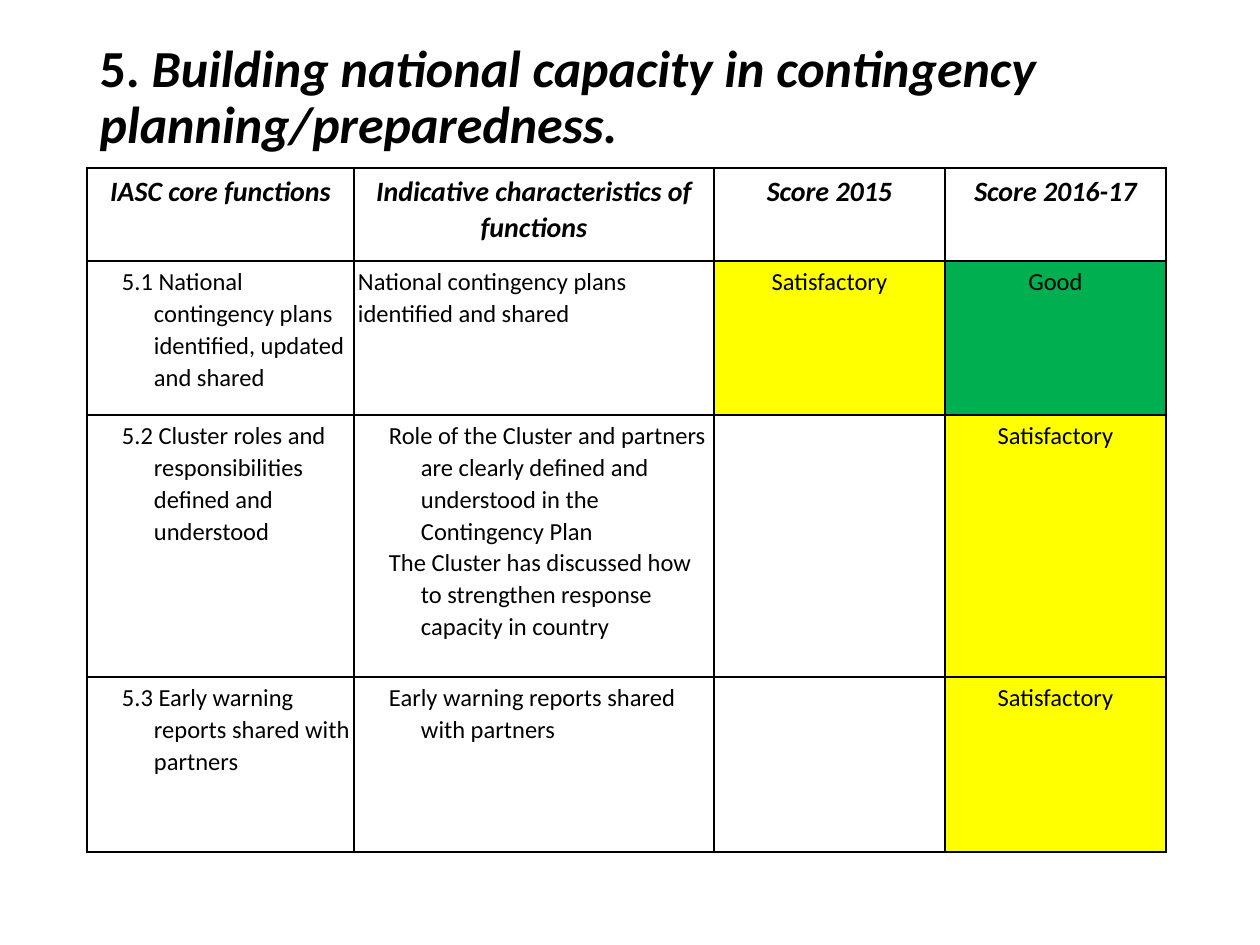
"""Build the slide on national capacity in contingency planning."""
import pptx
import pptx.dml.color
import pptx.enum.text
import pptx.oxml
import pptx.oxml.ns
import pptx.util

ALIGN = pptx.enum.text.PP_ALIGN
FONT = "Calibri"
BLACK, YELLOW, GREEN = "000000", "FFFF00", "00B050"
SCORE_FILLS = {"Satisfactory": YELLOW, "Good": GREEN}

TITLE_RUNS = [
    ("5. ", False),
    ("Building national capacity in contingency planning/preparedness.", True),
]
HEADERS = ["IASC core functions", "Indicative characteristics of functions",
           "Score 2015", "Score 2016-17"]
ROWS = [
    ["5.1 National contingency plans identified, updated and shared",
     "National contingency plans identified and shared",
     "Satisfactory", "Good"],
    ["5.2 Cluster roles and responsibilities defined and understood",
     "Role of the Cluster and partners are clearly defined and understood in the Contingency Plan\n"
     "The Cluster has discussed how to strengthen response capacity in country",
     "", "Satisfactory"],
    ["5.3 Early warning reports shared with partners",
     "Early warning reports shared with partners",
     "", "Satisfactory"],
]
UNINDENTED = (1, 1)
TITLE_BOX = (87, 50, 1086, 97)
TABLE_ORIGIN = (87, 168)
COLUMN_WIDTHS = [267, 360, 231, 221]
ROW_HEIGHTS = [93, 154, 262, 175]
CELL_MARGIN, HANGING_LEFT, HANGING_FIRST = 4, 63, -32


def px(length):
    return pptx.util.Emu(round(length * 914400 / 126))


def color(value):
    return pptx.dml.color.RGBColor.from_string(value)


def format_run(run, size, bold, italic):
    run.font.name = FONT
    run.font.size = pptx.util.Pt(size)
    run.font.bold = bold
    run.font.italic = italic
    run.font.color.rgb = color(BLACK)


def add_borders(cell):
    properties = cell._tc.get_or_add_tcPr()
    for index, side in enumerate(("lnL", "lnR", "lnT", "lnB")):
        properties.insert(index, pptx.oxml.parse_xml(
            f'<a:{side} {pptx.oxml.ns.nsdecls("a")} w="{pptx.util.Pt(1)}">'
            f'<a:solidFill><a:srgbClr val="{BLACK}"/></a:solidFill></a:{side}>'))


def fill_cell(cell, text, row, column):
    cell.margin_left = cell.margin_right = px(CELL_MARGIN)
    cell.margin_top = cell.margin_bottom = px(CELL_MARGIN)
    if text in SCORE_FILLS:
        cell.fill.solid()
        cell.fill.fore_color.rgb = color(SCORE_FILLS[text])
    else:
        cell.fill.background()
    add_borders(cell)
    if not text:
        return
    header = row == 0
    centered = header or column >= 2
    cell.text_frame.text = text
    for paragraph in cell.text_frame.paragraphs:
        paragraph.line_spacing = 1.07
        paragraph.alignment = ALIGN.CENTER if centered else ALIGN.LEFT
        if not centered and (row, column) != UNINDENTED:
            properties = paragraph._p.get_or_add_pPr()
            properties.set("marL", str(px(HANGING_LEFT)))
            properties.set("indent", str(px(HANGING_FIRST)))
        for run in paragraph.runs:
            format_run(run, 16 if header else 14, header, header)


def add_title(slide):
    title = slide.shapes.title
    title.left, title.top, title.width, title.height = map(px, TITLE_BOX)
    frame = title.text_frame
    frame.auto_size = pptx.enum.text.MSO_AUTO_SIZE.NONE
    frame.vertical_anchor = pptx.enum.text.MSO_ANCHOR.MIDDLE
    paragraph = frame.paragraphs[0]
    paragraph.alignment = ALIGN.LEFT
    paragraph.line_spacing = 0.9
    for text, italic in TITLE_RUNS:
        run = paragraph.add_run()
        run.text = text
        format_run(run, 29.7, True, italic)


def add_score_table(slide):
    table = slide.shapes.add_table(
        len(ROW_HEIGHTS), len(COLUMN_WIDTHS), *map(px, TABLE_ORIGIN),
        px(sum(COLUMN_WIDTHS)), px(sum(ROW_HEIGHTS))).table
    table.horz_banding = False
    for column, width in zip(table.columns, COLUMN_WIDTHS):
        column.width = px(width)
    for row, height in zip(table.rows, ROW_HEIGHTS):
        row.height = px(height)
    for row, texts in enumerate([HEADERS] + ROWS):
        for column, text in enumerate(texts):
            fill_cell(table.cell(row, column), text, row, column)


def main():
    presentation = pptx.Presentation()
    presentation.slide_width, presentation.slide_height = px(1260), px(945)
    slide = presentation.slides.add_slide(presentation.slide_layouts[5])
    add_title(slide)
    add_score_table(slide)
    presentation.save("out.pptx")


if __name__ == "__main__":
    main()
